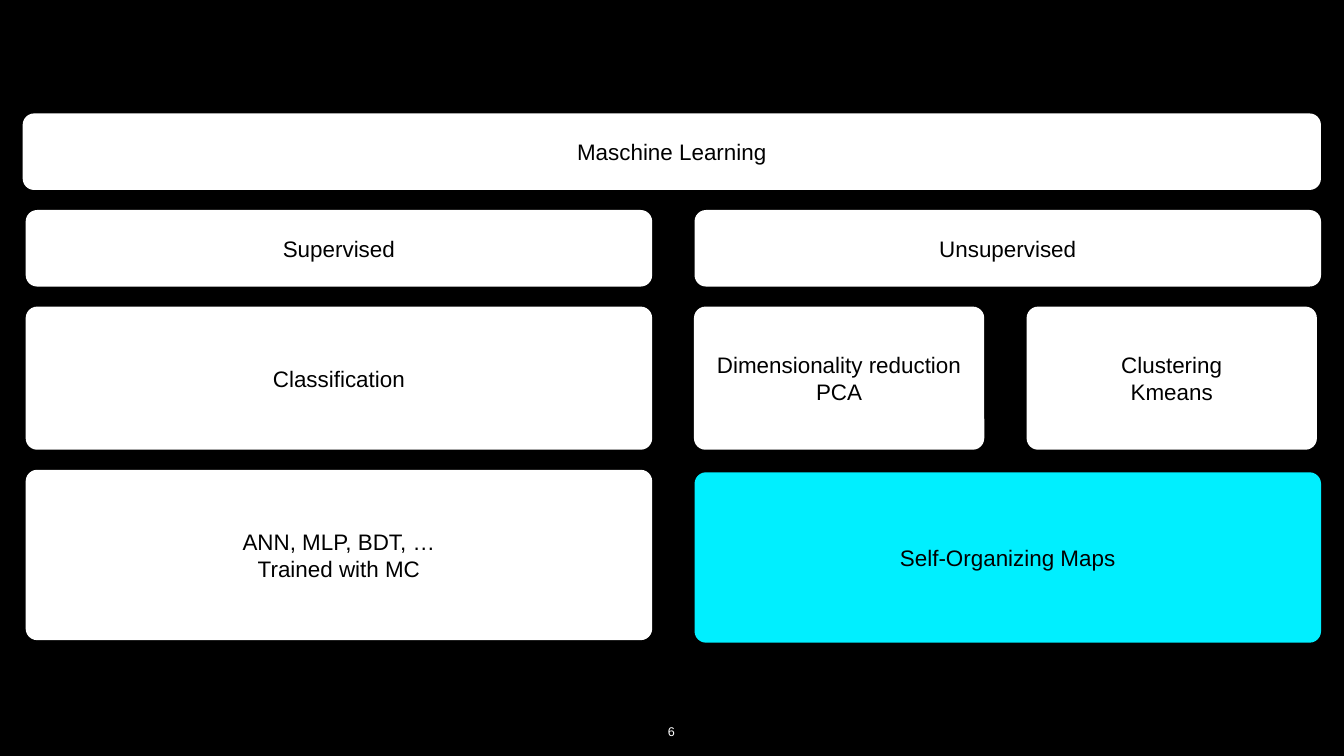
from dataclasses import dataclass

from pptx import Presentation
from pptx.dml.color import RGBColor
from pptx.enum import shapes, text
from pptx.util import Pt


@dataclass(frozen=True)
class Theme:
    background: RGBColor = RGBColor(0, 0, 0)
    box: RGBColor = RGBColor(255, 255, 255)
    highlight: RGBColor = RGBColor(0, 239, 255)
    box_text: RGBColor = RGBColor(0, 0, 0)
    page_text: RGBColor = RGBColor(255, 255, 255)
    font: str = "Arial"
    box_size: int = 32
    page_size: int = 18
    inset: float = 4
    radius: float = 16.4


THEME = Theme()

# Horizontal extents (left, width)
FULL = (32.4, 1854.7)
LEFT = (36.7, 895)
RIGHT = (992.2, 895)
RIGHT_FIRST = (991.4, 414.7)
RIGHT_SECOND = (1466.6, 414.7)

ROW_TOP = 162
ROW_GAP = 28.6
ROW_HEIGHTS = (109.4, 109.4, 204.5, 243.4)
HIGHLIGHT_DROP = 3.6


def row_top(row):
    return ROW_TOP + sum(ROW_HEIGHTS[:row]) + row * ROW_GAP


def write(shape, content, *, size, color, anchor, wrap=True):
    """Fill a shape with centred text; \\n starts a paragraph, \\v breaks a line."""
    frame = shape.text_frame
    frame.text = content
    frame.word_wrap = wrap
    frame.vertical_anchor = anchor
    frame.margin_left = frame.margin_right = Pt(THEME.inset)
    frame.margin_top = frame.margin_bottom = Pt(THEME.inset)
    for paragraph in frame.paragraphs:
        paragraph.alignment = text.PP_ALIGN.CENTER
        for run in paragraph.runs:
            run.font.name = THEME.font
            run.font.size = Pt(size)
            run.font.color.rgb = color


def add_box(slide, content, column, row, fill=THEME.box, drop=0):
    left, width = column
    height = ROW_HEIGHTS[row]
    box = slide.shapes.add_shape(
        shapes.MSO_SHAPE.ROUNDED_RECTANGLE,
        Pt(left), Pt(row_top(row) + drop), Pt(width), Pt(height))
    box.adjustments[0] = THEME.radius / height
    box.shadow.inherit = False
    box.fill.solid()
    box.fill.fore_color.rgb = fill
    box.line.fill.background()
    write(box, content, size=THEME.box_size, color=THEME.box_text,
          anchor=text.MSO_ANCHOR.MIDDLE)


def add_page_number(slide, number):
    box = slide.shapes.add_textbox(Pt(949.7), Pt(1030.3), Pt(18.7), Pt(29.5))
    write(box, number, size=THEME.page_size, color=THEME.page_text,
          anchor=text.MSO_ANCHOR.BOTTOM, wrap=False)
    box.text_frame.auto_size = text.MSO_AUTO_SIZE.SHAPE_TO_FIT_TEXT


def main():
    presentation = Presentation()
    presentation.slide_width = Pt(1920)
    presentation.slide_height = Pt(1080)
    slide = presentation.slides.add_slide(presentation.slide_layouts[6])
    slide.background.fill.solid()
    slide.background.fill.fore_color.rgb = THEME.background

    add_page_number(slide, "6")
    add_box(slide, "Maschine Learning", FULL, 0)
    add_box(slide, "Supervised", LEFT, 1)
    add_box(slide, "Unsupervised", RIGHT, 1)
    add_box(slide, "Dimensionality reduction\vPCA", RIGHT_FIRST, 2)
    add_box(slide, "Clustering\nKmeans", RIGHT_SECOND, 2)
    add_box(slide, "Self-Organizing Maps", RIGHT, 3,
            fill=THEME.highlight, drop=HIGHLIGHT_DROP)
    add_box(slide, "Classification", LEFT, 2)
    add_box(slide, "ANN, MLP, BDT, …\vTrained with MC", LEFT, 3)

    presentation.save("out.pptx")


if __name__ == "__main__":
    main()
